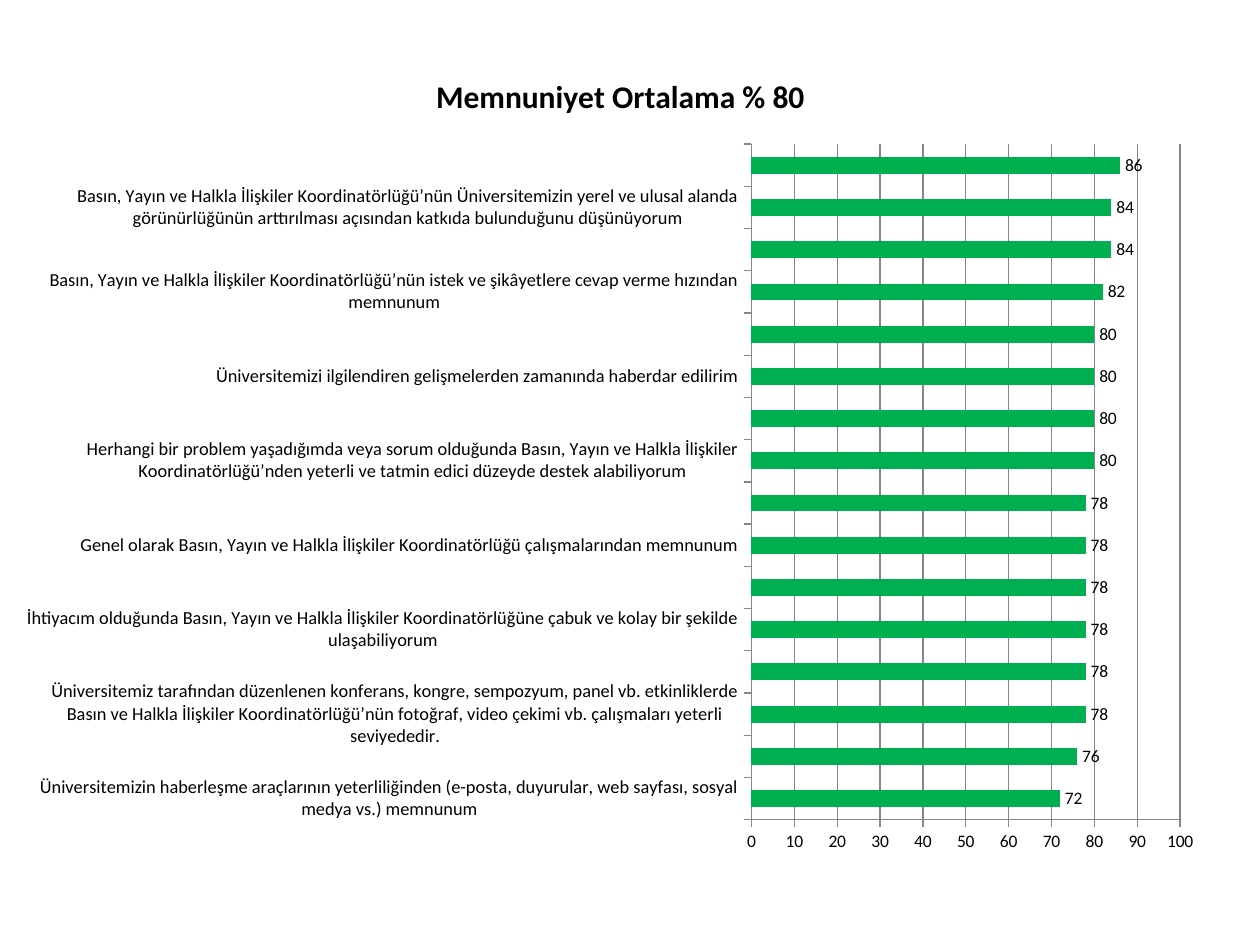
from pptx import Presentation
from pptx.chart.data import CategoryChartData
from pptx.dml.color import RGBColor
from pptx.enum.chart import XL_CHART_TYPE, XL_LABEL_POSITION, XL_TICK_MARK
from pptx.oxml import parse_xml
from pptx.oxml.ns import nsdecls
from pptx.util import Pt

TITLE = "Memnuniyet Ortalama % 80"
UNIT = "Basın, Yayın ve Halkla İlişkiler Koordinatörlüğü"
SCORES = [
    ("Üniversitemizin haberleşme araçlarının yeterliliğinden (e-posta, duyurular, web sayfası, sosyal medya vs.) memnunum", 72),
    ("Üniversitemiz kurumsal sosyal medya hesapları etkin bir şekilde yönetilmektedir.", 76),
    ("Üniversitemiz tarafından düzenlenen konferans, kongre, sempozyum, panel vb. etkinliklerde Basın ve Halkla İlişkiler Koordinatörlüğü’nün fotoğraf, video çekimi vb. çalışmaları yeterli seviyededir.", 78),
    (f"{UNIT} çalışanlarına yöneltilen soru/sorun ve taleplere karşı tutum ve yaklaşımdan memnunum", 78),
    (f"İhtiyacım olduğunda {UNIT}ne çabuk ve kolay bir şekilde ulaşabiliyorum", 78),
    (f"{UNIT} ve bağlı birimlerin web sayfasında aradığım bilgiye veya belgeye kolayca ulaşabiliyorum", 78),
    (f"Genel olarak {UNIT} çalışmalarından memnunum", 78),
    (f"{UNIT} personellerinin yaklaşım ve tutumundan memnunum", 78),
    (f"Herhangi bir problem yaşadığımda veya sorum olduğunda {UNIT}’nden yeterli ve tatmin edici düzeyde destek alabiliyorum", 80),
    (f"{UNIT}'nden talep edilen hizmetler için hızlı ve doğru çözümler üretilmektedir", 80),
    ("Üniversitemizi ilgilendiren gelişmelerden zamanında haberdar edilirim", 80),
    ("Üniversitemizin genel tanıtım faaliyetlerinden memnunum", 80),
    (f"{UNIT}’nün istek ve şikâyetlere cevap verme hızından memnunum", 82),
    (f"{UNIT}’nün sorunları çözme becerisinden memnunum", 84),
    (f"{UNIT}’nün Üniversitemizin yerel ve ulusal alanda görünürlüğünün arttırılması açısından katkıda bulunduğunu düşünüyorum", 84),
    (f"{UNIT}’nün diğer birimlerle olan koordinasyonundan memnunum", 86),
]
HEX = {"text": "000000", "bar": "00B050", "line": "868686"}
FRAME = [Pt(n) for n in (14.4, 25.92, 680.4, 470.88)]
PLOT = {"x": 0.61, "y": 0.12, "w": 0.36, "h": 0.82}


def color(key):
    return RGBColor.from_string(HEX[key])


def style(item, **form):
    for key, val in form.items():
        setattr(item, key, val)


def font(item, size, bold=False):
    style(item, name="Calibri", size=Pt(size), bold=bold)
    item.color.rgb = color("text")


def line(item):
    item.color.rgb = color("line")
    item.width = Pt(0.75)


deck = Presentation()
style(deck, slide_width=Pt(720), slide_height=Pt(540))
slide = deck.slides.add_slide(deck.slide_layouts[6])

data = CategoryChartData(number_format="0")
data.categories = [text for text, score in SCORES]
data.add_series(TITLE, [score for text, score in SCORES])
chart = slide.shapes.add_chart(XL_CHART_TYPE.BAR_CLUSTERED, *FRAME, data).chart
style(chart, has_legend=False, has_title=True)
font(chart.font, 10)
head = chart.chart_title.text_frame
head.text = TITLE
font(head.paragraphs[0].runs[0].font, 18, True)

plot = chart.plots[0]
style(plot, gap_width=150, vary_by_categories=False, has_data_labels=True)
tags = plot.data_labels
style(tags, show_value=True, number_format="0", number_format_is_linked=False,
      position=XL_LABEL_POSITION.OUTSIDE_END)
font(tags.font, 10)
fill = plot.series[0].format.fill
fill.solid()
fill.fore_color.rgb = color("bar")

for axis, size in ((chart.category_axis, 10.5), (chart.value_axis, 10)):
    style(axis, major_tick_mark=XL_TICK_MARK.OUTSIDE, minor_tick_mark=XL_TICK_MARK.NONE)
    font(axis.tick_labels.font, size)
    line(axis.format.line)
style(chart.value_axis, minimum_scale=0, maximum_scale=100, major_unit=10,
      has_major_gridlines=True)
style(chart.value_axis.tick_labels, number_format="0", number_format_is_linked=False)
line(chart.value_axis.major_gridlines.format.line)

area = chart._chartSpace.chart.plotArea
for old in area.findall("{*}layout"):
    area.remove(old)
parts = "".join(f'<c:{key} val="{val}"/>' for key, val in PLOT.items())
area.insert(0, parse_xml(
    f'<c:layout {nsdecls("c")}><c:manualLayout><c:layoutTarget val="inner"/>'
    f'<c:xMode val="edge"/><c:yMode val="edge"/>{parts}</c:manualLayout></c:layout>'))

deck.save("out.pptx")
